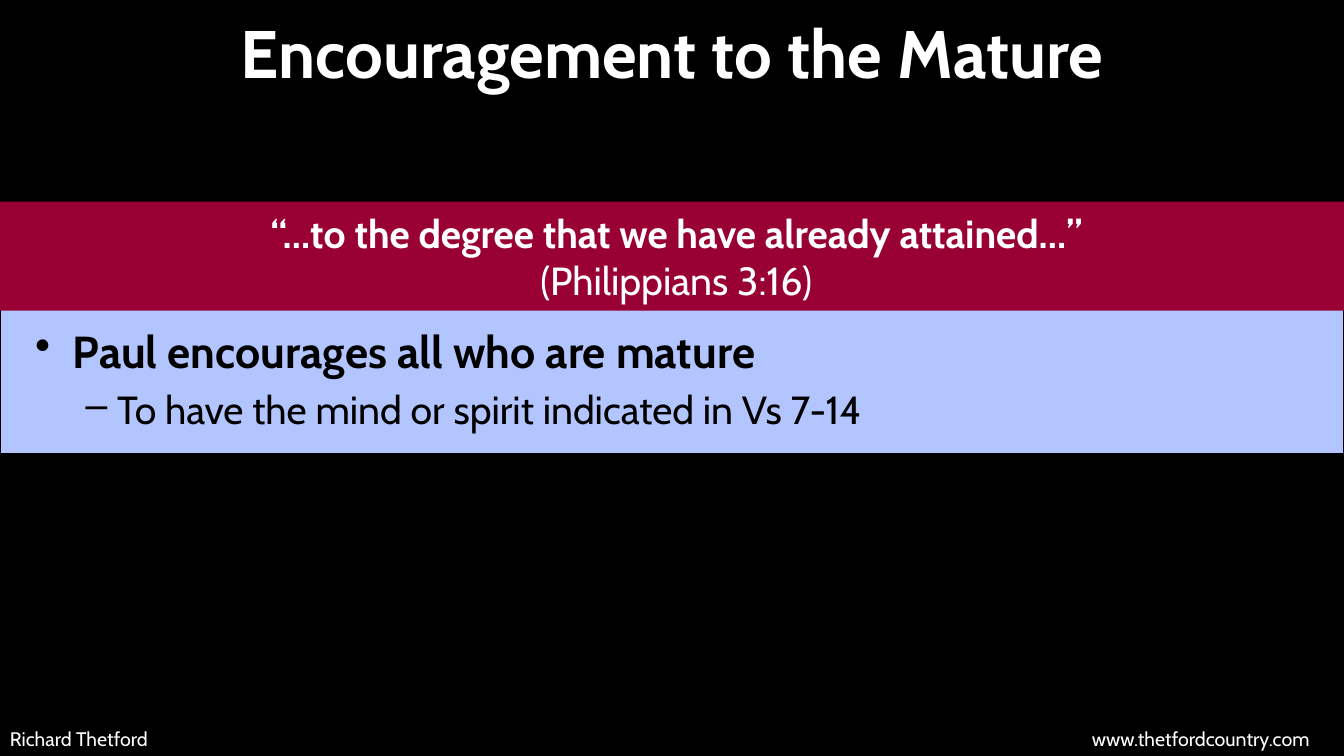
from lxml import etree
from pptx import Presentation
from pptx.dml.color import RGBColor
from pptx.enum.shapes import MSO_SHAPE
from pptx.enum.text import MSO_ANCHOR, PP_ALIGN
from pptx.oxml.ns import qn
from pptx.util import Pt

RECT = MSO_SHAPE.RECTANGLE
TOP, MIDDLE = MSO_ANCHOR.TOP, MSO_ANCHOR.MIDDLE
LEFT, CENTER = PP_ALIGN.LEFT, PP_ALIGN.CENTER

WIDTH, HEIGHT = 960, 540
BLACK, WHITE, CRIMSON, PERIWINKLE = "000000", "FFFFFF", "990033", "B3C5FF"


def rgb(value):
    return RGBColor.from_string(value)


class Deck:
    font = "Cabin"

    def __init__(self, prs):
        self.slide = prs.slides.add_slide(prs.slide_layouts[6])

    def background(self, color):
        fill = self.slide.background.fill
        fill.solid()
        fill.fore_color.rgb = rgb(color)

    def band(self, x, y, w, h, color, line=None):
        sp = self.slide.shapes.add_shape(RECT, Pt(x), Pt(y), Pt(w), Pt(h))
        sp.shadow.inherit = False
        sp.fill.solid()
        sp.fill.fore_color.rgb = rgb(color)
        if line:
            sp.line.color.rgb = rgb(line)
            sp.line.width = Pt(0.75)
        else:
            sp.line.fill.background()

    def text_box(self, x, y, w, h, anchor=TOP):
        tf = self.slide.shapes.add_textbox(Pt(x), Pt(y), Pt(w), Pt(h)).text_frame
        tf.word_wrap = True
        tf.vertical_anchor = anchor
        return tf

    def paragraph(self, tf, runs, size, color=WHITE, align=LEFT, first=True):
        p = tf.paragraphs[0] if first else tf.add_paragraph()
        p.alignment = align
        for text, bold in runs:
            r = p.add_run()
            r.text = text
            style = {"name": self.font, "size": Pt(size), "bold": bold}
            for key, value in style.items():
                setattr(r.font, key, value)
            r.font.color.rgb = rgb(color)
        return p

    def bullet(self, p, char, margin, hang, level, before):
        p.level = level
        p.space_before = Pt(before)
        pPr = p._p.get_or_add_pPr()
        pPr.set("marL", str(Pt(margin)))
        pPr.set("indent", str(-Pt(hang)))
        etree.SubElement(pPr, qn("a:buChar"), char=char)

    def right_tab(self, p, pos):
        tabs = etree.SubElement(p._p.get_or_add_pPr(), qn("a:tabLst"))
        etree.SubElement(tabs, qn("a:tab"), pos=str(Pt(pos)), algn="r")


def main():
    prs = Presentation()
    prs.slide_width, prs.slide_height = Pt(WIDTH), Pt(HEIGHT)
    deck = Deck(prs)
    deck.background(BLACK)
    deck.band(0, 144, WIDTH, 180, PERIWINKLE, line=BLACK)

    title = deck.text_box(18, 1.5, 924, 70.5, MIDDLE)
    deck.paragraph(title, [("Encouragement to the Mature", True)], 48, align=CENTER)

    points = [
        ("Paul encourages all who are mature", 32, True, "•", 27, 27),
        ("To have the mind or spirit indicated in Vs 7-14", 28, False, "–", 58.5, 22.5),
    ]
    body = deck.text_box(18, 228, 924, 90)
    for level, (text, size, bold, char, margin, hang) in enumerate(points):
        p = deck.paragraph(body, [(text, bold)], size, BLACK, first=level == 0)
        deck.bullet(p, char, margin, hang, level, size * 0.2)

    deck.band(0, 144, WIDTH, 78, CRIMSON)
    quote = deck.text_box(150, 146, 666, 75)
    verse = [("“…to the degree that we have already attained…” ", True),
             ("(Philippians 3:16)", False)]
    deck.paragraph(quote, verse, 28, align=CENTER)

    footer = deck.text_box(0, 515.5, WIDTH, 24.5)
    p = deck.paragraph(footer, [("Richard Thetford\twww.thetfordcountry.com", False)], 14)
    deck.right_tab(p, 928.5)

    prs.save("out.pptx")


if __name__ == "__main__":
    main()
